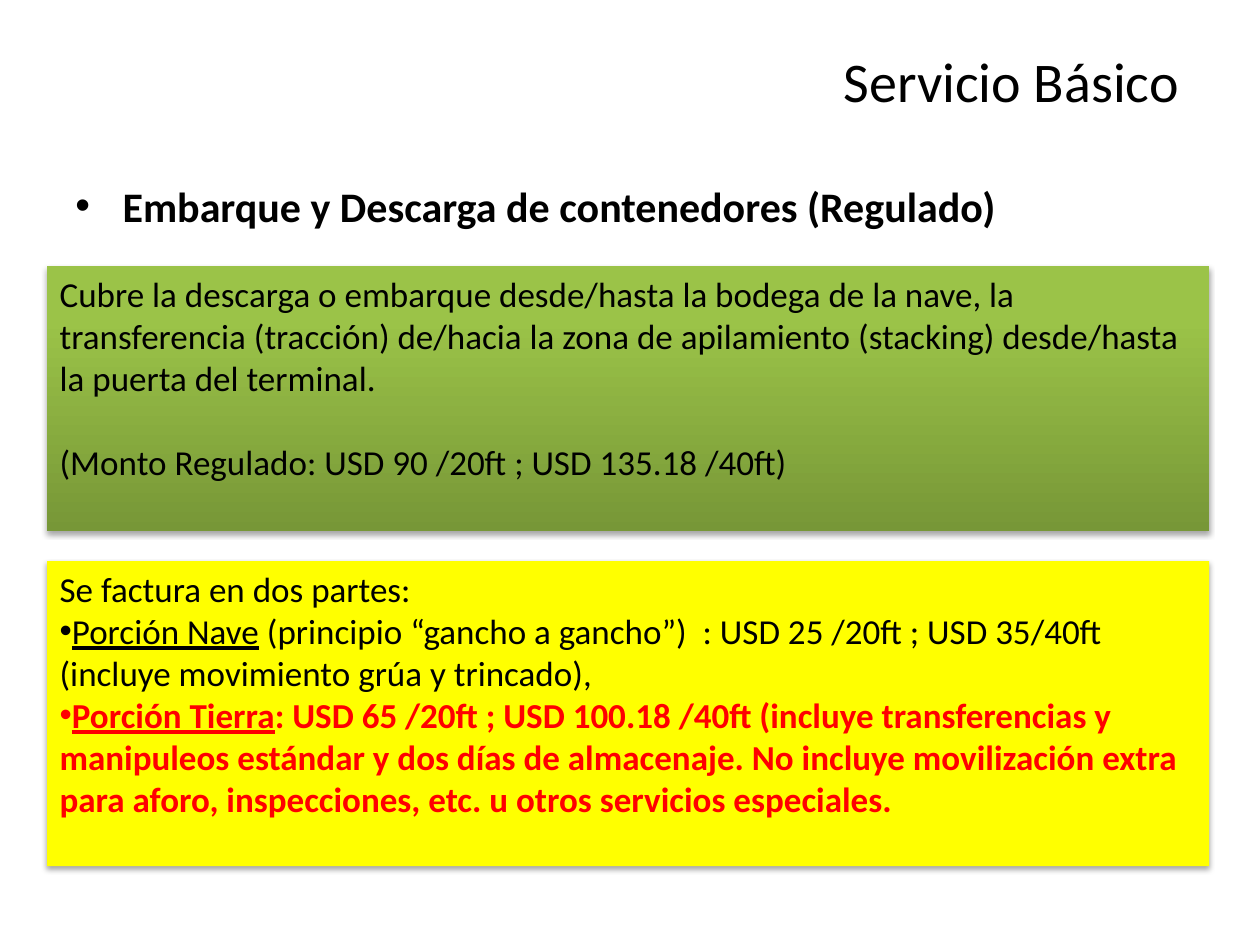
"""Build the slide on the basic container service and its regulated rates."""
from lxml.etree import SubElement
from pptx import Presentation
from pptx.dml.color import RGBColor
from pptx.enum.shapes import MSO_SHAPE as Shape
from pptx.enum.text import MSO_ANCHOR as Anchor, MSO_AUTO_SIZE as AutoSize, PP_ALIGN as Align
from pptx.oxml import parse_xml
from pptx.oxml.ns import nsdecls, qn
from pptx.util import Pt

SHADOW = (
    f'<a:effectLst {nsdecls("a")}><a:outerShdw blurRad="{Pt(3.1)}" dist="{Pt(1.8)}" '
    'dir="5400000" rotWithShape="0"><a:srgbClr val="000000"><a:alpha val="35000"/>'
    '</a:srgbClr></a:outerShdw></a:effectLst>'
)


def color(value):
    return RGBColor.from_string(value)


def write(paragraph, runs, bullet=None, align=Align.LEFT, space_before=0):
    paragraph.alignment = align
    paragraph.space_before = Pt(space_before)
    if bullet:
        margin, indent = bullet
        properties = paragraph._p.get_or_add_pPr()
        properties.set("marL", str(Pt(margin)))
        properties.set("indent", str(Pt(indent)))
        SubElement(properties, qn("a:buFont")).set("typeface", "Arial")
        SubElement(properties, qn("a:buChar")).set("char", "•")
    for text, values in runs:
        run = paragraph.add_run()
        run.text = text
        font_values = {"name": "Calibri", "size": Pt(20), "bold": False, "underline": False}
        font_values.update(values)
        run.font.color.rgb = color(font_values.pop("color", "000000"))
        for name, value in font_values.items():
            setattr(run.font, name, value)


presentation = Presentation()
presentation.slide_width, presentation.slide_height = Pt(720), Pt(540)
slide = presentation.slides.add_slide(presentation.slide_layouts[5])

title = slide.shapes.title
title.left, title.top, title.width, title.height = Pt(247.7), Pt(22.5), Pt(433.4), Pt(46)
title.text_frame.auto_size = AutoSize.NONE
title.text_frame.vertical_anchor = Anchor.MIDDLE
write(title.text_frame.paragraphs[0], [("Servicio Básico", {"size": Pt(32)})], align=Align.RIGHT)

heading = slide.shapes.add_textbox(Pt(36), Pt(99.5), Pt(662), Pt(36))
heading.text_frame.word_wrap = True
write(
    heading.text_frame.paragraphs[0],
    [("Embarque y Descarga de contenedores (Regulado)", {"size": Pt(24), "bold": True})],
    bullet=(27, -27),
)

warning = {"color": "FF0000", "bold": True}
service_paragraphs = [
    {"runs": [(
        "Cubre la descarga o embarque desde/hasta la bodega de la nave, la transferencia "
        "(tracción) de/hacia la zona de apilamiento (stacking) desde/hasta la puerta del "
        "terminal.", {})]},
    {"runs": [("(Monto Regulado: USD 90 /20ft ; USD 135.18 /40ft)", {})], "space_before": 24},
]
billing_paragraphs = [
    {"runs": [("Se factura en dos partes:", {})]},
    {"runs": [
        ("Porción Nave", {"underline": True}),
        (" (principio “gancho a gancho”)  : USD 25 /20ft ; USD 35/40ft "
         "(incluye movimiento grúa y trincado),", {}),
    ], "bullet": (0, -28.8)},
    {"runs": [
        ("Porción Tierra", {**warning, "underline": True}),
        (": USD 65 /20ft ; USD 100.18 /40ft (incluye transferencias y manipuleos estándar "
         "y dos días de almacenaje. No incluye movilización extra para aforo, inspecciones, "
         "etc. u otros servicios especiales.", warning),
    ], "bullet": (0, -28.8)},
]

panels = [
    (152, 151.7, [(0, "779737"), (0.8, "9BC348")], service_paragraphs),
    (320.7, 174.3, "FFFF00", billing_paragraphs),
]
for top, height, fill, paragraphs in panels:
    panel = slide.shapes.add_shape(Shape.RECTANGLE, Pt(27), Pt(top), Pt(664), Pt(height))
    if isinstance(fill, str):
        panel.fill.solid()
        panel.fill.fore_color.rgb = color(fill)
    else:
        panel.fill.gradient()
        panel.fill.gradient_angle = 90
        for stop, (position, value) in zip(panel.fill.gradient_stops, fill):
            stop.position = position
            stop.color.rgb = color(value)
    panel.line.fill.background()
    panel._element.spPr.append(parse_xml(SHADOW))
    frame = panel.text_frame
    frame.word_wrap = True
    frame.vertical_anchor = Anchor.TOP
    for index, values in enumerate(paragraphs):
        write(frame.add_paragraph() if index else frame.paragraphs[0], **values)

presentation.save("out.pptx")
